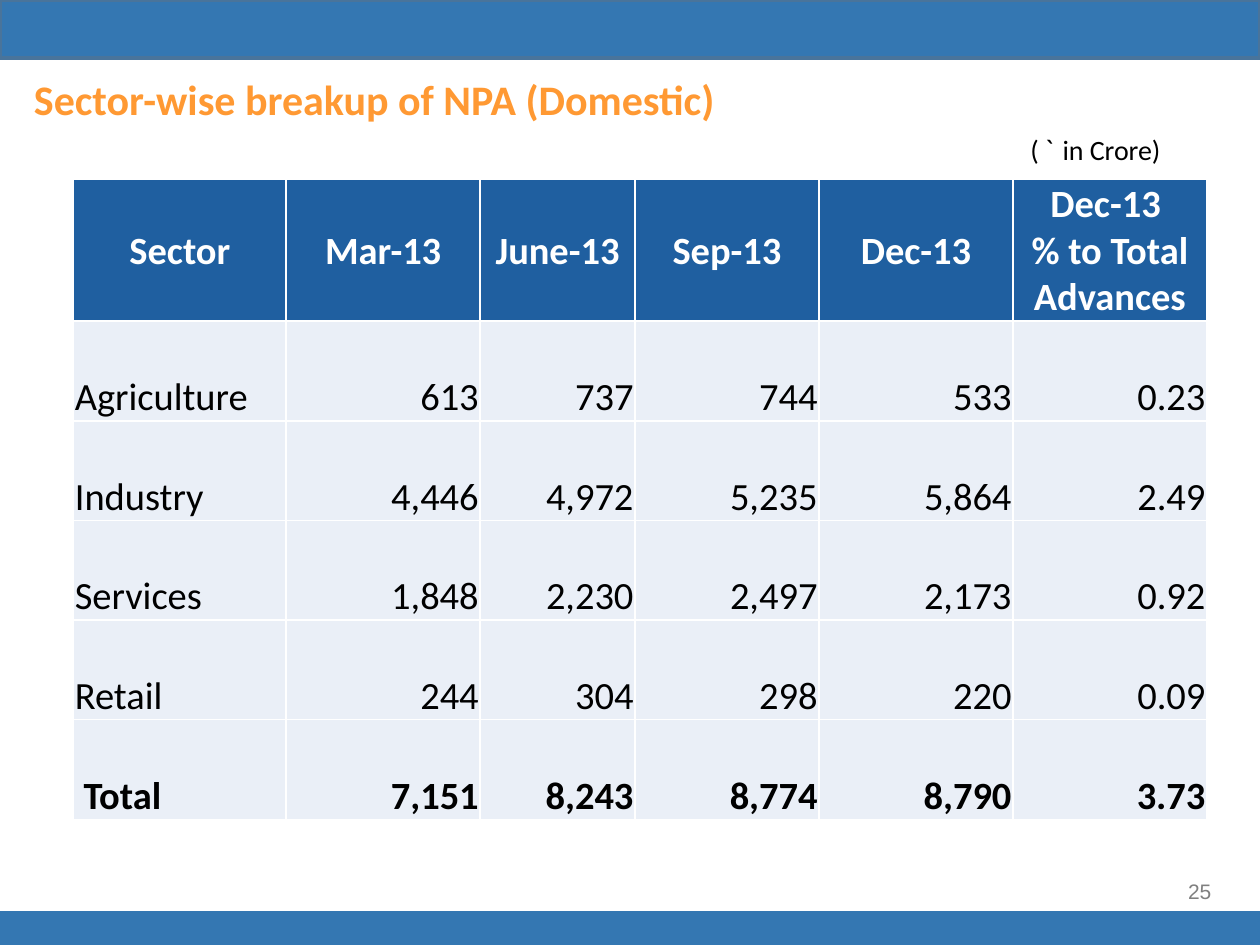
from dataclasses import dataclass

from lxml.etree import SubElement
from pptx import Presentation
from pptx.dml.color import RGBColor
from pptx.enum.shapes import MSO_SHAPE as Shape
from pptx.enum.text import MSO_ANCHOR as Anchor, MSO_AUTO_SIZE as AutoSize, PP_ALIGN as Align
from pptx.oxml.ns import qn
from pptx.util import Cm, Pt

TITLE = "Sector-wise breakup of NPA (Domestic)"
PAGE_NUMBER = "25"
HEADERS = ["Sector", "Mar-13", "June-13", "Sep-13", "Dec-13", "Dec-13 \n% to Total Advances"]
SECTORS = [
    ("Agriculture", "613", "737", "744", "533", "0.23"),
    ("Industry", "4,446", "4,972", "5,235", "5,864", "2.49"),
    ("Services", "1,848", "2,230", "2,497", "2,173", "0.92"),
    ("Retail", "244", "304", "298", "220", "0.09"),
    (" Total", "7,151", "8,243", "8,774", "8,790", "3.73"),
]
COLUMN_WIDTHS = [4.29, 3.91, 3.12, 3.71, 3.91, 3.91]
ROW_HEIGHT = 2.01
SLIDE_WIDTH, SLIDE_HEIGHT = 25.4, 19.05
TOP_BAR, BOTTOM_BAR = 1.17, 0.64


@dataclass(frozen=True)
class Theme:
    bar: str = "3477B2"
    bar_edge: str = "49749B"
    title: str = "FF9933"
    header: str = "1F5FA0"
    body: str = "EAEFF7"
    white: str = "FFFFFF"
    ink: str = "000000"
    muted: str = "808080"
    font: str = "Calibri"
    symbol_font: str = "Lato"
    number_font: str = "Arial"
    title_size: int = 24
    table_size: int = 22
    unit_size: int = 16
    number_size: int = 12


theme = Theme()


def add_span(para, text, size, color, font=theme.font, bold=False):
    span = para.add_run()
    span.text = text
    span.font.size = Pt(size)
    span.font.name = font
    span.font.bold = bold
    span.font.color.rgb = RGBColor.from_string(color)


def write(frame, text, align=Align.LEFT, **style):
    for index, line in enumerate(text.split("\n")):
        para = frame.add_paragraph() if index else frame.paragraphs[0]
        para.alignment = align
        add_span(para, line, **style)


def add_bar(slide, top, height, edge):
    bar = slide.shapes.add_shape(Shape.RECTANGLE, 0, Cm(top), Cm(SLIDE_WIDTH), Cm(height))
    bar.shadow.inherit = False
    bar.fill.solid()
    bar.fill.fore_color.rgb = RGBColor.from_string(theme.bar)
    bar.line.color.rgb = RGBColor.from_string(edge)
    bar.line.width = Pt(2)


def add_box(slide, left, top, width, height):
    box = slide.shapes.add_textbox(Cm(left), Cm(top), Cm(width), Cm(height))
    box.text_frame.word_wrap = True
    return box.text_frame


def format_cell(cell, fill, anchor):
    cell.margin_left = cell.margin_right = cell.margin_top = Cm(0.03)
    cell.margin_bottom = 0
    cell.vertical_anchor = anchor
    properties = cell._tc.get_or_add_tcPr()
    for side in ("a:lnL", "a:lnR", "a:lnT", "a:lnB"):
        border = SubElement(properties, qn(side), w=str(Pt(1)))
        solid = SubElement(border, qn("a:solidFill"))
        SubElement(solid, qn("a:srgbClr"), val=theme.white)
    cell.fill.solid()
    cell.fill.fore_color.rgb = RGBColor.from_string(fill)


def add_sector_table(slide):
    rows = [HEADERS, *SECTORS]
    table = slide.shapes.add_table(
        len(rows), len(HEADERS), Cm(1.48), Cm(3.61),
        Cm(sum(COLUMN_WIDTHS)), Cm(ROW_HEIGHT * len(rows)),
    ).table
    for column, width in zip(table.columns, COLUMN_WIDTHS):
        column.width = Cm(width)
    for row_index, values in enumerate(rows):
        table.rows[row_index].height = Cm(ROW_HEIGHT)
        is_header = row_index == 0
        is_total = row_index == len(rows) - 1
        for column_index, value in enumerate(values):
            cell = table.cell(row_index, column_index)
            format_cell(
                cell,
                theme.header if is_header else theme.body,
                Anchor.MIDDLE if is_header else Anchor.BOTTOM,
            )
            body_align = Align.RIGHT if column_index else Align.LEFT
            write(
                cell.text_frame, value,
                align=Align.CENTER if is_header else body_align,
                size=theme.table_size,
                color=theme.white if is_header else theme.ink,
                bold=is_header or is_total,
            )


def main():
    deck = Presentation()
    deck.slide_width, deck.slide_height = Cm(SLIDE_WIDTH), Cm(SLIDE_HEIGHT)
    slide = deck.slides.add_slide(deck.slide_layouts[5])

    add_bar(slide, 0, TOP_BAR, theme.bar_edge)
    add_bar(slide, SLIDE_HEIGHT - BOTTOM_BAR, BOTTOM_BAR, theme.bar)

    title = slide.shapes.title
    title.left, title.top, title.width, title.height = Cm(0.43), Cm(1.22), Cm(21.39), Cm(1.55)
    title.text_frame.auto_size = AutoSize.NONE
    title.text_frame.vertical_anchor = Anchor.MIDDLE
    write(title.text_frame, TITLE, size=theme.title_size, color=theme.title, bold=True)

    add_sector_table(slide)

    unit = add_box(slide, 20.52, 2.54, 3.61, 0.94)
    unit.auto_size = AutoSize.SHAPE_TO_FIT_TEXT
    for text, font in (("( ", theme.font), ("`", theme.symbol_font), (" in Crore)", theme.font)):
        add_span(unit.paragraphs[0], text, theme.unit_size, theme.ink, font=font)

    number = add_box(slide, 23.7, 17.58, 1.7, 1.02)
    write(number, PAGE_NUMBER, size=theme.number_size, color=theme.muted, font=theme.number_font)

    deck.save("out.pptx")


if __name__ == "__main__":
    main()
